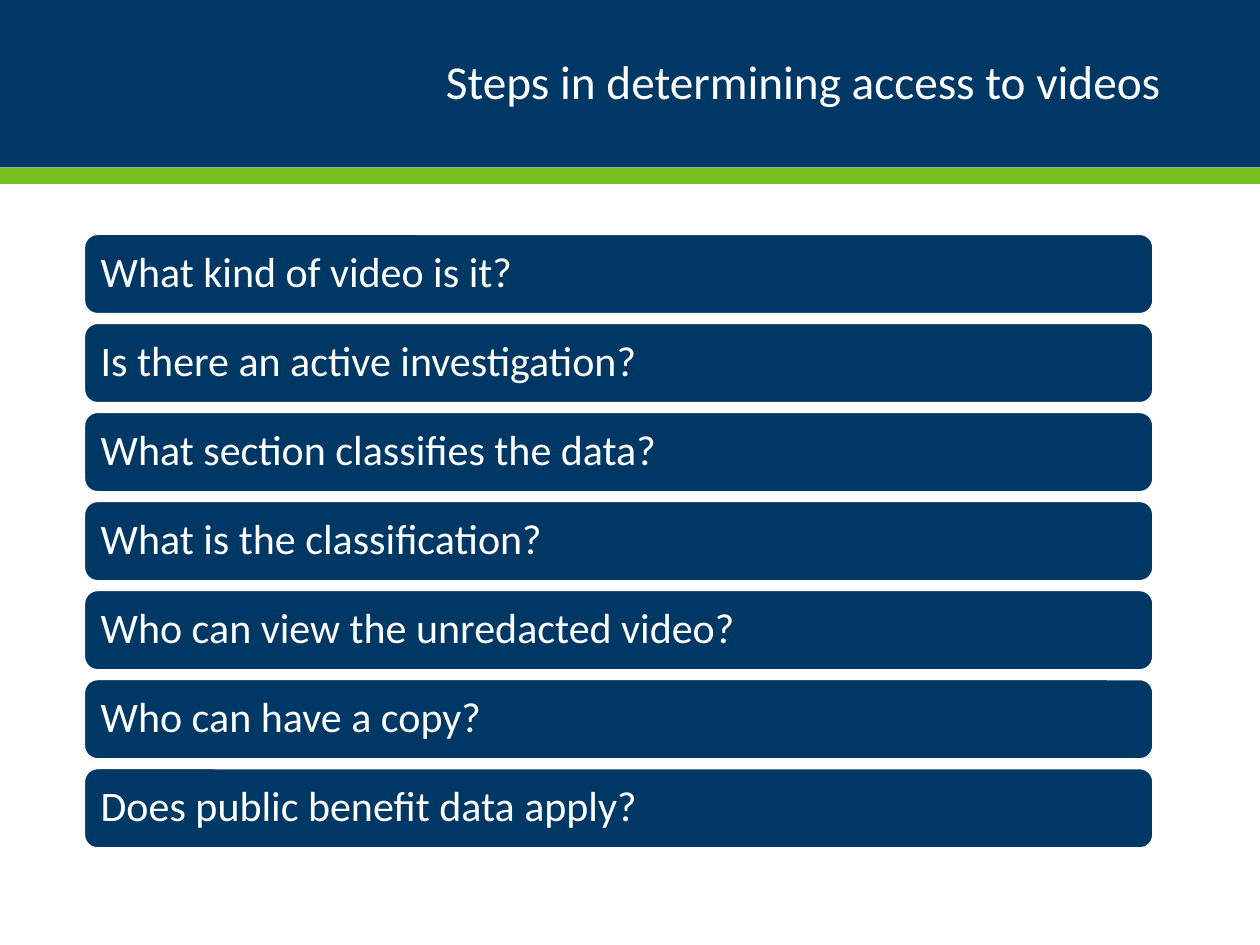
import pptx
import pptx.util
import pptx.dml.color
import pptx.enum.shapes
import pptx.enum.text

Inches, Pt = pptx.util.Inches, pptx.util.Pt
SHAPE = pptx.enum.shapes.MSO_SHAPE
ALIGN = pptx.enum.text.PP_ALIGN
COLORS = {"navy": "003865", "green": "78BE21", "white": "FFFFFF"}
STEPS = [
    "What kind of video is it?",
    "Is there an active investigation?",
    "What section classifies the data?",
    "What is the classification?",
    "Who can view the unredacted video?",
    "Who can have a copy?",
    "Does public benefit data apply?",
]


def add_block(kind, box, color):
    block = slide.shapes.add_shape(kind, *[Inches(n) for n in box])
    block.shadow.inherit = False
    block.fill.solid()
    block.fill.fore_color.rgb = pptx.dml.color.RGBColor.from_string(COLORS[color])
    block.line.fill.background()
    return block


def set_text(shape, text, size, align):
    frame = shape.text_frame
    frame.text = text
    frame.word_wrap = True
    frame.auto_size = pptx.enum.text.MSO_AUTO_SIZE.NONE
    frame.vertical_anchor = pptx.enum.text.MSO_ANCHOR.MIDDLE
    para = frame.paragraphs[0]
    para.alignment = align
    para.line_spacing = 0.9
    para.font.name = "Calibri"
    para.font.size = Pt(size)
    para.font.color.rgb = pptx.dml.color.RGBColor.from_string(COLORS["white"])


deck = pptx.Presentation()
deck.slide_width, deck.slide_height = Inches(10), Inches(7.5)
slide = deck.slides.add_slide(deck.slide_layouts[5])

# Header bands lie behind the title
title = slide.shapes.title
for top, height, color in [(0, 1.33, "navy"), (1.33, 0.13, "green")]:
    band = add_block(SHAPE.RECTANGLE, (0, top, 10, height), color)
    title.element.addprevious(band.element)

title.left, title.top = Inches(0.69), Inches(0.17)
title.width, title.height = Inches(8.62), Inches(1)
set_text(title, "Steps in determining access to videos", 27, ALIGN.RIGHT)

# Equal rows between the first and last bar
first, last = 1.86, 6.1
pitch = (last - first) / (len(STEPS) - 1)
for row, step in enumerate(STEPS):
    bar = add_block(SHAPE.ROUNDED_RECTANGLE,
                    (0.67, first + row * pitch, 8.48, 0.63), "navy")
    bar.line.color.rgb = pptx.dml.color.RGBColor.from_string(COLORS["white"])
    bar.line.width = Pt(0.85)
    set_text(bar, step, 24, ALIGN.LEFT)
    bar.text_frame.margin_left = bar.text_frame.margin_right = Inches(0.1)

deck.save("out.pptx")
